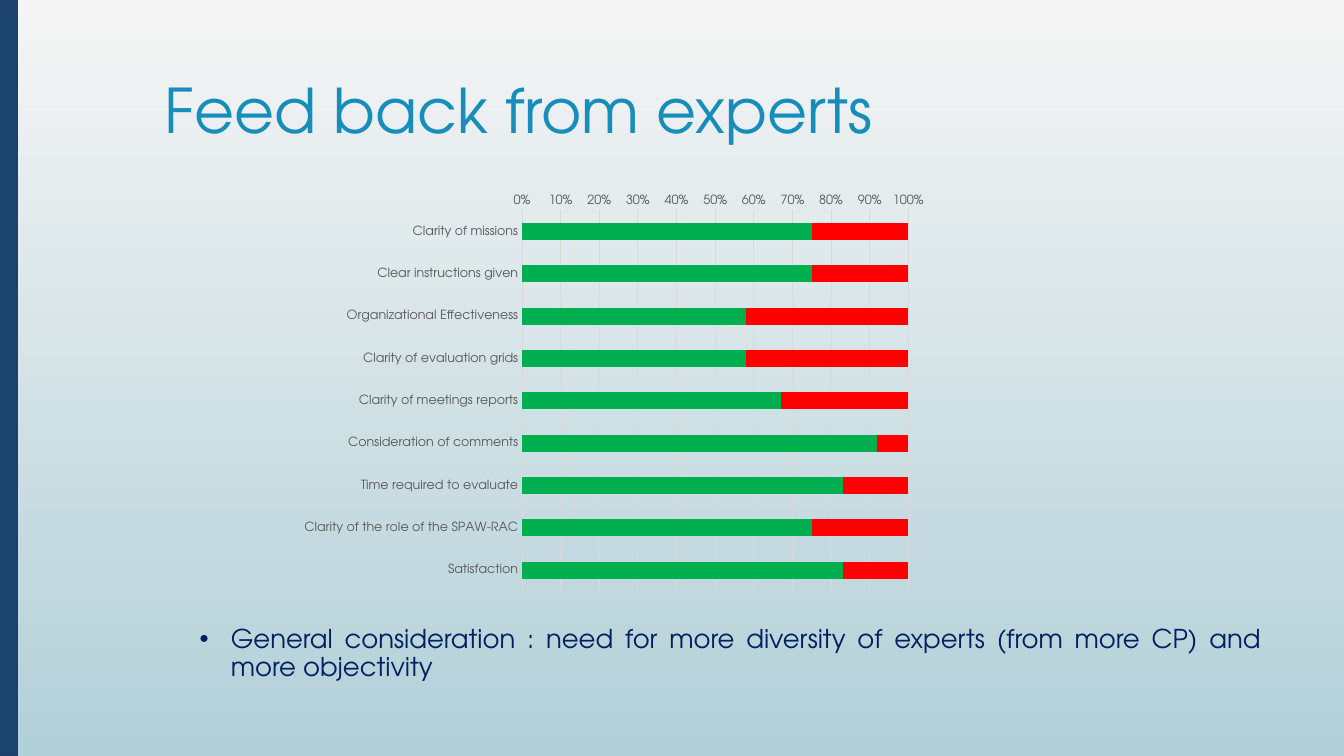
import pptx
import pptx.util
import pptx.chart.data
import pptx.dml.color
import pptx.enum.chart
import pptx.enum.shapes
import pptx.enum.text
import lxml.etree

Inches = pptx.util.Inches
Pt = pptx.util.Pt
RGB = pptx.dml.color.RGBColor.from_string

THEME = {
    "font": "TeX Gyre Adventor",
    "sizes": {"title": 44, "body": 18.5, "chart": 10, "axis": 9},
    "colors": {
        "title": "178DBB", "body": "002060", "chart": "000000", "axis": "595959",
        "grid": "D9D9D9", "bar": "1C436D", "bar_line": "1C426B",
        "sky_top": "F5F5F5", "sky_bottom": "B2D0D8",
        "positive": "00B050", "negative": "FF0000",
    },
}
COLORS = {name: RGB(value) for name, value in THEME["colors"].items()}


def set_attrs(obj, values):
    for name, value in values.items():
        setattr(obj, name, value)


def set_font(font, role):
    set_attrs(font, {"name": THEME["font"], "size": Pt(THEME["sizes"][role]), "bold": False})
    font.color.rgb = COLORS[role]


prs = pptx.Presentation()
set_attrs(prs, {"slide_width": Inches(13.33), "slide_height": Inches(7.5)})
s = prs.slides.add_slide(prs.slide_layouts[1])

fill = s.background.fill
fill.gradient()
fill.gradient_angle = 270
for stop, name, position in zip(fill.gradient_stops, ("sky_top", "sky_bottom"), (0, 1)):
    stop.color.rgb = COLORS[name]
    stop.position = position

sp = s.shapes.add_shape(pptx.enum.shapes.MSO_SHAPE.RECTANGLE, 0, 0, Inches(0.17), prs.slide_height)
sp.shadow.inherit = False
sp.fill.solid()
sp.fill.fore_color.rgb = COLORS["bar"]
sp.line.color.rgb = COLORS["bar_line"]
sp.line.width = Pt(1)

texts = [
    (s.shapes.title, "title", (1.53, 0.4, 10.72, 1.45), "Feed back from experts",
     pptx.enum.text.MSO_ANCHOR.MIDDLE, pptx.enum.text.PP_ALIGN.LEFT),
    (s.placeholders[1], "body", (1.88, 6.16, 10.72, 0.68),
     "General consideration : need for more diversity of experts (from more CP) and more objectivity",
     pptx.enum.text.MSO_ANCHOR.TOP, pptx.enum.text.PP_ALIGN.JUSTIFY),
]
for sp, role, box, text, anchor, align in texts:
    set_attrs(sp, dict(zip(("left", "top", "width", "height"), map(Inches, box))))
    tf = sp.text_frame
    set_attrs(tf, {"word_wrap": True, "vertical_anchor": anchor,
                   "auto_size": pptx.enum.text.MSO_AUTO_SIZE.NONE})
    p = tf.paragraphs[0]
    set_attrs(p, {"alignment": align, "line_spacing": 0.9, "space_before": Pt(0)})
    if role == "body":
        p.space_after = Pt(6)
        pPr = p._p.get_or_add_pPr()
        pPr.set("marL", str(Inches(0.31)))
        pPr.set("indent", str(-Inches(0.31)))
        bullet = lxml.etree.SubElement(pPr, pptx.oxml.ns.qn("a:buChar"))
        bullet.set("char", "•")
    r = p.add_run()
    r.text = text
    set_font(r.font, role)

ratings = {
    "Clarity of missions": 75,
    "Clear instructions given": 75,
    "Organizational Effectiveness": 58,
    "Clarity of evaluation grids": 58,
    "Clarity of meetings reports": 67,
    "Consideration of comments": 92,
    "Time required to evaluate": 83,
    "Clarity of the role of the SPAW-RAC": 75,
    "Satisfaction": 83,
}
data = pptx.chart.data.CategoryChartData()
data.categories = list(ratings)
data.add_series("Series 1", list(ratings.values()))
data.add_series("Series 2", [100 - value for value in ratings.values()])
chart = s.shapes.add_chart(pptx.enum.chart.XL_CHART_TYPE.BAR_STACKED_100,
                           Inches(2.89), Inches(1.85), Inches(6.4), Inches(4.1), data).chart
set_attrs(chart, {"has_title": False, "has_legend": False})
set_font(chart.font, "chart")
plot = chart.plots[0]
set_attrs(plot, {"gap_width": 150, "overlap": 100, "vary_by_categories": False})
for series, name in zip(plot.series, ("positive", "negative")):
    series.format.fill.solid()
    series.format.fill.fore_color.rgb = COLORS[name]

cat_axis, val_axis = chart.category_axis, chart.value_axis
for axis in (cat_axis, val_axis):
    set_attrs(axis, {"major_tick_mark": pptx.enum.chart.XL_TICK_MARK.NONE,
                     "minor_tick_mark": pptx.enum.chart.XL_TICK_MARK.NONE})
    set_font(axis.tick_labels.font, "axis")
cat_axis.reverse_order = True
set_attrs(val_axis, {"has_major_gridlines": True, "minimum_scale": 0,
                     "maximum_scale": 1, "major_unit": 0.1})
set_attrs(val_axis.tick_labels, {"number_format": "0%", "number_format_is_linked": False})
val_axis.format.line.fill.background()
for line in (cat_axis.format.line, val_axis.major_gridlines.format.line):
    line.color.rgb = COLORS["grid"]
    line.width = Pt(0.75)

prs.save("out.pptx")
